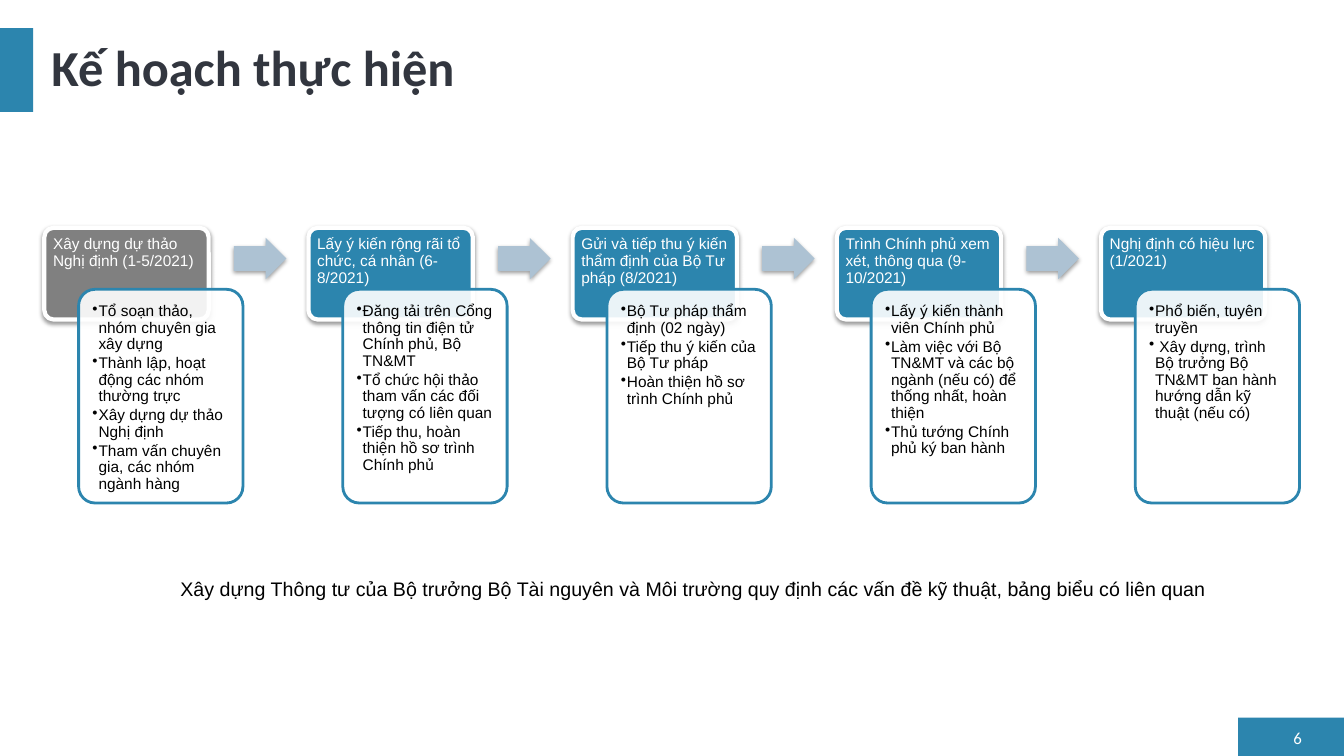
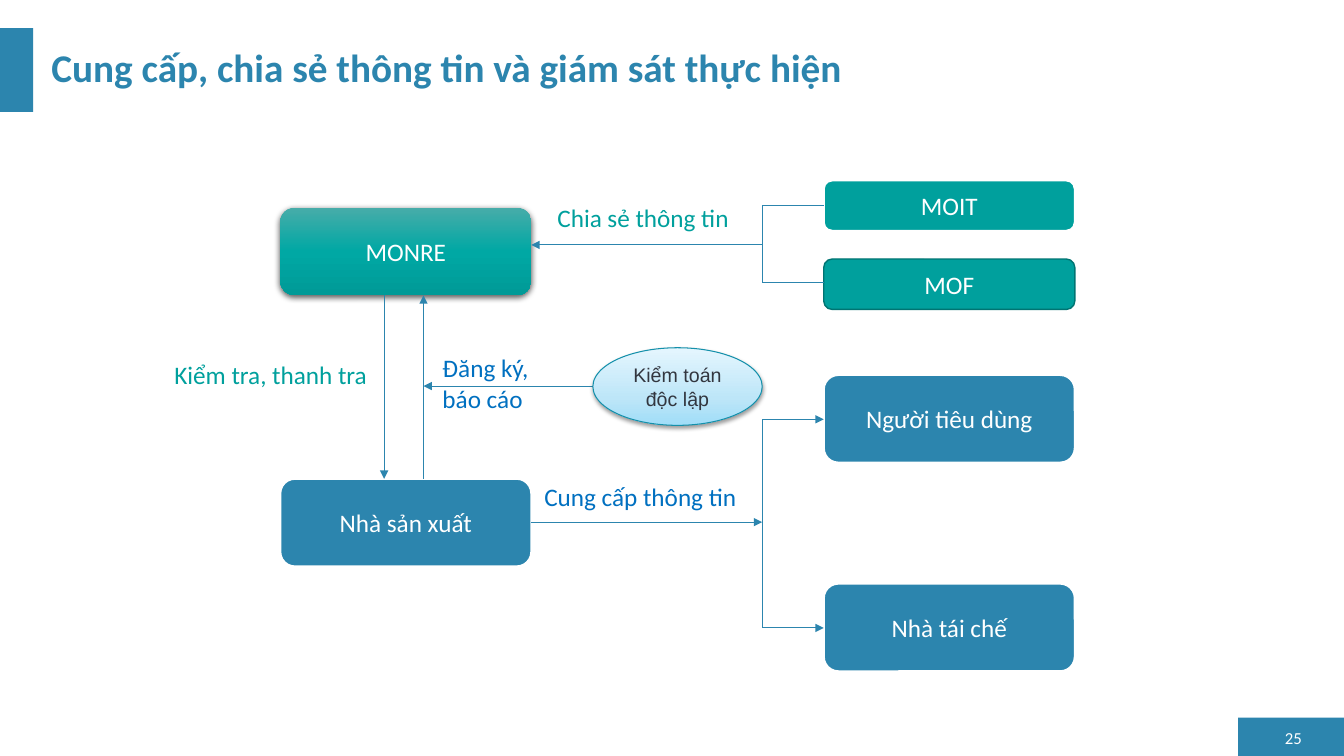
from lxml.etree import SubElement
from pptx import Presentation
from pptx.dml.color import RGBColor
from pptx.enum.shapes import MSO_CONNECTOR, MSO_SHAPE
from pptx.enum.text import MSO_ANCHOR, PP_ALIGN
from pptx.oxml.ns import qn
from pptx.util import Pt

PX = 9144
HUES = {
    "blue": "2C85AE", "gray": "808080", "pale": "ADC2D3", "white": "FFFFFF",
    "black": "000000", "ink": "32363F", "teal": "00A09D", "deep": "007472",
    "link": "0070C0", "rim": "1490AB",
}
MINT = [(0, "47ACA9"), (50, "00A8A4"), (100, "009A97")]
SKY = [(0, "E5F6FE"), (65, "BDE6F8"), (100, "A0DDF8")]
SOFT = (38, 3.1, 1.6)
HARD = (63, 4.5, 1.5)

STEPS = [
    ("Xây dựng dự thảo Nghị định (1-5/2021)",
     ["Tổ soạn thảo, nhóm chuyên gia xây dựng",
      "Thành lập, hoạt động các nhóm thường trực",
      "Xây dựng dự thảo Nghị định",
      "Tham vấn chuyên gia, các nhóm ngành hàng"]),
    ("Lấy ý kiến rộng rãi tổ chức, cá nhân (6-8/2021)",
     ["Đăng tải trên Cổng thông tin điện tử Chính phủ, Bộ TN&MT",
      "Tổ chức hội thảo tham vấn các đối tượng có liên quan",
      "Tiếp thu, hoàn thiện hồ sơ trình Chính phủ"]),
    ("Gửi và tiếp thu ý kiến thẩm định của Bộ Tư pháp (8/2021)",
     ["Bộ Tư pháp thẩm định (02 ngày)",
      "Tiếp thu ý kiến của Bộ Tư pháp",
      "Hoàn thiện hồ sơ trình Chính phủ"]),
    ("Trình Chính phủ xem xét, thông qua (9-10/2021)",
     ["Lấy ý kiến thành viên Chính phủ",
      "Làm việc với Bộ TN&MT và các bộ ngành (nếu có) để thống nhất, hoàn thiện",
      "Thủ tướng Chính phủ ký ban hành"]),
    ("Nghị định có hiệu lực (1/2021)",
     ["Phổ biến, tuyên truyền",
      " Xây dựng, trình Bộ trưởng Bộ TN&MT ban hành hướng dẫn kỹ thuật (nếu có)"]),
]
NOTE = ("Xây dựng Thông tư của Bộ trưởng Bộ Tài nguyên và Môi trường quy định "
        "các vấn đề kỹ thuật, bảng biểu có liên quan")


def color(name):
    return RGBColor.from_string(HUES[name])


class Deck:
    def __init__(self):
        self.prs = Presentation()
        self.prs.slide_width, self.prs.slide_height = 1333 * PX, 750 * PX
        self.base = self.prs.slide_layouts[5]
        self.slide = None

    def bands(self):
        for box in ((1228, 712, 105, 38), (0, 28, 33, 83)):
            band = self.shape(MSO_SHAPE.RECTANGLE, box, "blue")
            self.base.shapes.element.append(band.element)

    def page(self, title, size, hue, num):
        first = self.slide is None
        self.slide = self.prs.slides.add_slide(self.base)
        if first:
            self.bands()
        head = self.slide.shapes.title
        head.left, head.top, head.width, head.height = (v * PX for v in (41, 28, 1260, 83))
        self.words(head, [title], size, hue, align=PP_ALIGN.LEFT, bold=True, space=0.9)
        self.label((1260, 720, 41, 23), [num], 12, "white", align=PP_ALIGN.RIGHT,
                   anchor=MSO_ANCHOR.MIDDLE)

    def words(self, shape, lines, size, hue, face="Calibri", align=PP_ALIGN.CENTER,
              anchor=MSO_ANCHOR.MIDDLE, bold=False, space=None, pad=None, after=0, dots=False):
        frame = shape.text_frame
        frame.word_wrap = True
        frame.vertical_anchor = anchor
        if pad:
            (frame.margin_left, frame.margin_top,
             frame.margin_right, frame.margin_bottom) = (v * PX for v in pad)
        frame.text = "\n".join(lines)
        for par in frame.paragraphs:
            par.alignment = align
            par.line_spacing = space
            par.space_after = Pt(after)
            font = par.font
            font.name, font.size, font.bold = face, Pt(size), bold
            font.color.rgb = color(hue)
            if dots:
                props = par._p.get_or_add_pPr()
                props.set("marL", str(6 * PX))
                props.set("indent", str(-6 * PX))
                mark = SubElement(props, qn("a:buChar"), char="•")
                props.find(qn("a:defRPr")).addprevious(mark)

    def shape(self, kind, box, fill=None, line=None, width=1, adj=(), glow=None, grad=None,
              alpha=None):
        item = self.slide.shapes.add_shape(kind, *(v * PX for v in box))
        for i, value in enumerate(adj):
            item.adjustments[i] = value
        if grad:
            self.blend(item, grad)
        else:
            item.fill.solid()
            item.fill.fore_color.rgb = color(fill)
        if alpha:
            tint = item.element.spPr.find(qn("a:solidFill"))[0]
            SubElement(tint, qn("a:alpha"), val=str(alpha * 1000))
        if line:
            item.line.color.rgb = color(line)
            item.line.width = Pt(width)
        else:
            item.line.fill.background()
        item.shadow.inherit = False
        if glow:
            self.shade(item, *glow)
        return item

    def blend(self, item, grad):
        item.fill.gradient()
        item.fill.gradient_angle = 270
        stops = item.element.spPr.find(qn("a:gradFill")).find(qn("a:gsLst"))
        for old in list(stops):
            stops.remove(old)
        for pos, tint in grad:
            stop = SubElement(stops, qn("a:gs"), pos=str(pos * 1000))
            SubElement(stop, qn("a:srgbClr"), val=tint)

    def shade(self, item, alpha, blur, dist):
        effect = item.element.spPr.find(qn("a:effectLst"))
        drop = SubElement(effect, qn("a:outerShdw"), blurRad=str(int(Pt(blur))),
                          dist=str(int(Pt(dist))), dir="5400000", rotWithShape="0")
        tint = SubElement(drop, qn("a:srgbClr"), val=HUES["black"])
        SubElement(tint, qn("a:alpha"), val=str(alpha * 1000))

    def label(self, box, lines, size, hue, align=PP_ALIGN.LEFT, anchor=MSO_ANCHOR.TOP, **style):
        item = self.slide.shapes.add_textbox(*(v * PX for v in box))
        self.words(item, lines, size, hue, align=align, anchor=anchor, **style)

    def node(self, box, text, fill="blue", line="white", width=1.5, **style):
        item = self.shape(MSO_SHAPE.ROUNDED_RECTANGLE, box, fill, line, width, **style)
        self.words(item, [text], 18, "white")

    def link(self, ends, tip=True):
        item = self.slide.shapes.add_connector(MSO_CONNECTOR.STRAIGHT, *(v * PX for v in ends))
        item.line.color.rgb = color("blue")
        item.line.width = Pt(0.75)
        props = item.element.spPr
        if tip:
            SubElement(props.find(qn("a:ln")), qn("a:tailEnd"), type="triangle")
        SubElement(props, qn("a:effectLst"))

    def step(self, left, head, tasks, fill):
        style = dict(face="Arial", align=PP_ALIGN.LEFT, anchor=MSO_ANCHOR.TOP, space=0.9)
        tab = self.shape(MSO_SHAPE.ROUNDED_RECTANGLE, (left, 226, 163, 91), fill, "white", 3,
                         adj=(0.1,), glow=SOFT)
        self.words(tab, [head], 11, "white", pad=(6, 6, 5, 5), **style)
        card = self.shape(MSO_SHAPE.ROUNDED_RECTANGLE, (left + 34, 287, 163, 212), "white",
                          "blue", 2, adj=(0.1,), alpha=90)
        self.words(card, tasks, 11, "black", pad=(9, 9, 8, 9), after=1.6, dots=True, **style)


def plan(deck):
    deck.page("Kế hoạch thực hiện", 36, "ink", "6")
    for i, (head, tasks) in enumerate(STEPS):
        left = 44 + 262 * i
        deck.step(left, head, tasks, "blue" if i else "gray")
        if i < len(STEPS) - 1:
            deck.shape(MSO_SHAPE.RIGHT_ARROW, (left + 188, 236, 52, 41), "pale",
                       adj=(0.6, 0.5), glow=SOFT)
    deck.label((83, 567, 1210, 34), [NOTE], 14, "black", face="Arial", align=PP_ALIGN.CENTER)


def flow(deck):
    deck.page("Cung cấp, chia sẻ thông tin và giám sát thực hiện", 28, "blue", "25")
    for left, top, text in ((278, 475, "Nhà sản xuất"), (817, 372, "Người tiêu dùng"),
                            (817, 579, "Nhà tái chế")):
        deck.node((left, top, 249, 87), text)
    deck.node((278, 206, 249, 87), "MONRE", line=None, grad=MINT, glow=HARD)
    deck.node((817, 257, 249, 50), "MOF", "teal", "deep", 1)
    deck.node((817, 179, 249, 50), "MOIT", "teal")
    for box, lines, hue in (
        ((429, 345, 135, 71), ["Đăng ký,", "báo cáo"], "link"),
        ((530, 473, 213, 40), ["Cung cấp thông tin"], "link"),
        ((543, 196, 213, 40), ["Chia sẻ thông tin"], "teal"),
    ):
        deck.label(box, lines, 18, hue)
    deck.label((158, 352, 221, 40), ["Kiểm tra, thanh tra"], 18, "teal", align=PP_ALIGN.CENTER)
    for ends in ((756, 416, 756, 623), (817, 204, 756, 204), (817, 280, 756, 280),
                 (756, 204, 756, 281)):
        deck.link(ends, tip=False)
    for ends in ((756, 416, 817, 416), (756, 623, 817, 623), (420, 475, 420, 293),
                 (381, 293, 381, 475), (527, 518, 756, 518), (756, 243, 527, 243),
                 (588, 383, 420, 383)):
        deck.link(ends)
    audit = deck.shape(MSO_SHAPE.OVAL, (588, 345, 168, 77), line="rim", width=0.75,
                       grad=SKY, glow=SOFT)
    deck.words(audit, ["Kiểm toán độc lập"], 14, "ink", face="Arial")


def main():
    deck = Deck()
    plan(deck)
    flow(deck)
    deck.prs.save("out.pptx")


if __name__ == "__main__":
    main()
